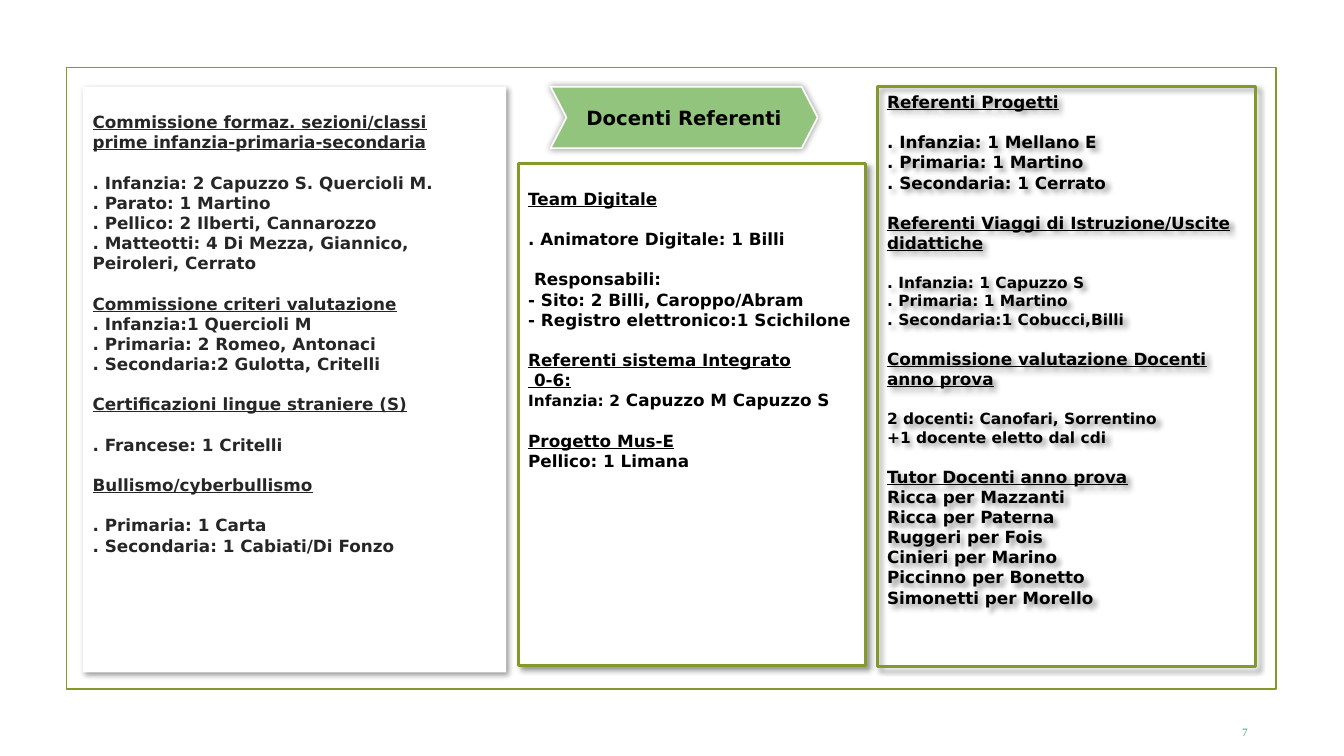
from dataclasses import dataclass

from lxml import etree
from pptx import Presentation
from pptx.dml.color import RGBColor
from pptx.enum.shapes import MSO_SHAPE
from pptx.enum.text import MSO_ANCHOR, PP_ALIGN
from pptx.oxml.ns import qn
from pptx.util import Inches, Pt

RECT, CHEVRON = MSO_SHAPE.RECTANGLE, MSO_SHAPE.CHEVRON
TOP, MIDDLE = MSO_ANCHOR.TOP, MSO_ANCHOR.MIDDLE
LEFT, CENTER = PP_ALIGN.LEFT, PP_ALIGN.CENTER


@dataclass(frozen=True)
class Theme:
    font: str = "DejaVu Sans"
    number_font: str = "Times New Roman"
    olive: str = "83992A"
    green: str = "93C47D"
    white: str = "FFFFFF"
    black: str = "000000"
    dark: str = "262626"
    teal: str = "3C9770"
    title: int = 14
    body: int = 12
    small: int = 11
    number: int = 8
    blank_line: float = 14.4


@dataclass(frozen=True)
class Section:
    titles: tuple
    lines: tuple
    spaced: bool = True
    small: bool = False


COMMITTEES = [
    Section(("Commissione formaz. sezioni/classi", "prime infanzia-primaria-secondaria"),
            (". Infanzia: 2 Capuzzo S. Quercioli M.", ". Parato: 1 Martino",
             ". Pellico: 2 Ilberti, Cannarozzo",
             ". Matteotti: 4 Di Mezza, Giannico, Peiroleri, Cerrato")),
    Section(("Commissione criteri valutazione",),
            (". Infanzia:1 Quercioli M", ". Primaria: 2 Romeo, Antonaci",
             ". Secondaria:2 Gulotta, Critelli"), spaced=False),
    Section(("Certificazioni lingue straniere (S)",), (". Francese: 1 Critelli",)),
    Section(("Bullismo/cyberbullismo",),
            (". Primaria: 1 Carta", ". Secondaria: 1 Cabiati/Di Fonzo")),
]
DIGITAL_TEAM = [
    Section(("Team Digitale",), (". Animatore Digitale: 1 Billi",)),
    Section((), (" Responsabili:", "- Sito: 2 Billi, Caroppo/Abram",
                 "- Registro elettronico:1 Scichilone")),
    Section(("Referenti sistema Integrato", " 0-6:"),
            (("Infanzia: 2", " Capuzzo M Capuzzo S"),), spaced=False),
    Section(("Progetto Mus-E",), ("Pellico: 1 Limana",), spaced=False),
]
PROJECT_LEADS = [
    Section(("Referenti Progetti",),
            (". Infanzia: 1 Mellano E", ". Primaria: 1 Martino", ". Secondaria: 1 Cerrato")),
    Section(("Referenti Viaggi di Istruzione/Uscite didattiche",),
            (". Infanzia: 1 Capuzzo S", ". Primaria: 1 Martino",
             ". Secondaria:1 Cobucci,Billi"), small=True),
    Section(("Commissione valutazione Docenti anno prova",),
            ("2 docenti: Canofari, Sorrentino", "+1 docente eletto dal cdi"), small=True),
    Section(("Tutor Docenti anno prova",),
            ("Ricca per Mazzanti", "Ricca per Paterna", "Ruggeri per Fois",
             "Cinieri per Marino", "Piccinno per Bonetto", "Simonetti per Morello"),
            spaced=False),
]


class Deck:
    def __init__(self, theme):
        self.theme = theme
        self.prs = Presentation()
        self.prs.slide_width, self.prs.slide_height = Inches(13.33), Inches(7.5)
        self.slide = self.prs.slides.add_slide(self.prs.slide_layouts[6])

    def place(self, x, y, w, h):
        sw, sh = self.prs.slide_width, self.prs.slide_height
        return [round(v * size / 100) for v, size in zip((x, y, w, h), (sw, sh, sw, sh))]

    def shape(self, kind, box, fill=None, line=None, width=2):
        sp = self.slide.shapes.add_shape(kind, *self.place(*box))
        sp.shadow.inherit = False
        if fill:
            sp.fill.solid()
            sp.fill.fore_color.rgb = RGBColor.from_string(fill)
        else:
            sp.fill.background()
        if line:
            sp.line.color.rgb = RGBColor.from_string(line)
            sp.line.width = Pt(width)
        else:
            sp.line.fill.background()
        return sp

    def shadow(self, sp, blur=4, dist=3, angle=45):
        effects = sp._element.spPr.find(qn("a:effectLst"))
        shadow = etree.SubElement(effects, qn("a:outerShdw"), blurRad=str(Pt(blur)),
                                  dist=str(Pt(dist)), dir=str(angle * 60000),
                                  algn="ctr", rotWithShape="0")
        color = etree.SubElement(shadow, qn("a:srgbClr"), val=self.theme.black)
        etree.SubElement(color, qn("a:alpha"), val="40000")

    def frame(self, tf, anchor=TOP, top=0.05, inset=0.1):
        tf.word_wrap = True
        tf.vertical_anchor = anchor
        tf.margin_left = tf.margin_right = Inches(inset)
        tf.margin_top, tf.margin_bottom = Inches(top), Inches(inset / 2)

    def style(self, p, size, color, bold=True, underline=False, align=LEFT, name=None):
        p.alignment = align
        f = p.font
        f.name, f.size, f.bold = name or self.theme.font, Pt(size), bold
        f.underline = underline
        f.color.rgb = RGBColor.from_string(color)

    def panel(self, box, sections, color, fill=None, line=None, top=0.05):
        t = self.theme
        sp = self.shape(RECT, box, fill, line)
        self.shadow(sp)
        tf = sp.text_frame
        self.frame(tf, top=top)
        p = None
        for section in sections:
            rows = [(text, True) for text in section.titles]
            rows += [(text, False) for text in section.lines]
            for i, (text, heading) in enumerate(rows):
                gap = i == 0 or (section.spaced and i == len(section.titles))
                first = p is None
                p = tf.paragraphs[0] if first else tf.add_paragraph()
                p.space_before = Pt(t.blank_line if gap and not first else 0)
                size = t.small if section.small and not heading else t.body
                self.style(p, size, color, underline=heading)
                if isinstance(text, tuple):
                    for part, part_size in zip(text, (t.small, t.body)):
                        r = p.add_run()
                        r.text, r.font.size = part, Pt(part_size)
                else:
                    p.add_run().text = text

    def banner(self, box, text):
        t = self.theme
        sp = self.shape(CHEVRON, box, t.green, t.white, 1.25)
        sp.adjustments[0] = 0.26
        self.shadow(sp, 5, 0, 0)
        self.frame(sp.text_frame, MIDDLE)
        p = sp.text_frame.paragraphs[0]
        p.text = text
        self.style(p, t.title, t.black, align=CENTER)

    def page_number(self, box, text):
        t = self.theme
        tf = self.slide.shapes.add_textbox(*self.place(*box)).text_frame
        self.frame(tf, top=0, inset=0)
        p = tf.paragraphs[0]
        p.text = text
        self.style(p, t.number, t.teal, bold=False, name=t.number_font)


def main():
    t = Theme()
    deck = Deck(t)
    deck.shape(RECT, (4.95, 8.93, 90, 82.27), line=t.olive, width=1.25)
    deck.page_number((92.42, 96, 3.53, 2.93), "7")
    deck.panel((6.15, 11.47, 31.51, 77.47), COMMITTEES, t.dark, fill=t.white, top=0.25)
    deck.panel((38.56, 21.6, 25.81, 66.4), DIGITAL_TEAM, t.black, t.white, t.olive, top=0.25)
    deck.banner((40.96, 11.47, 19.88, 8.13), "Docenti Referenti")
    deck.panel((65.27, 11.47, 28.13, 76.67), PROJECT_LEADS, t.black, line=t.olive)
    deck.prs.save("out.pptx")


if __name__ == "__main__":
    main()
